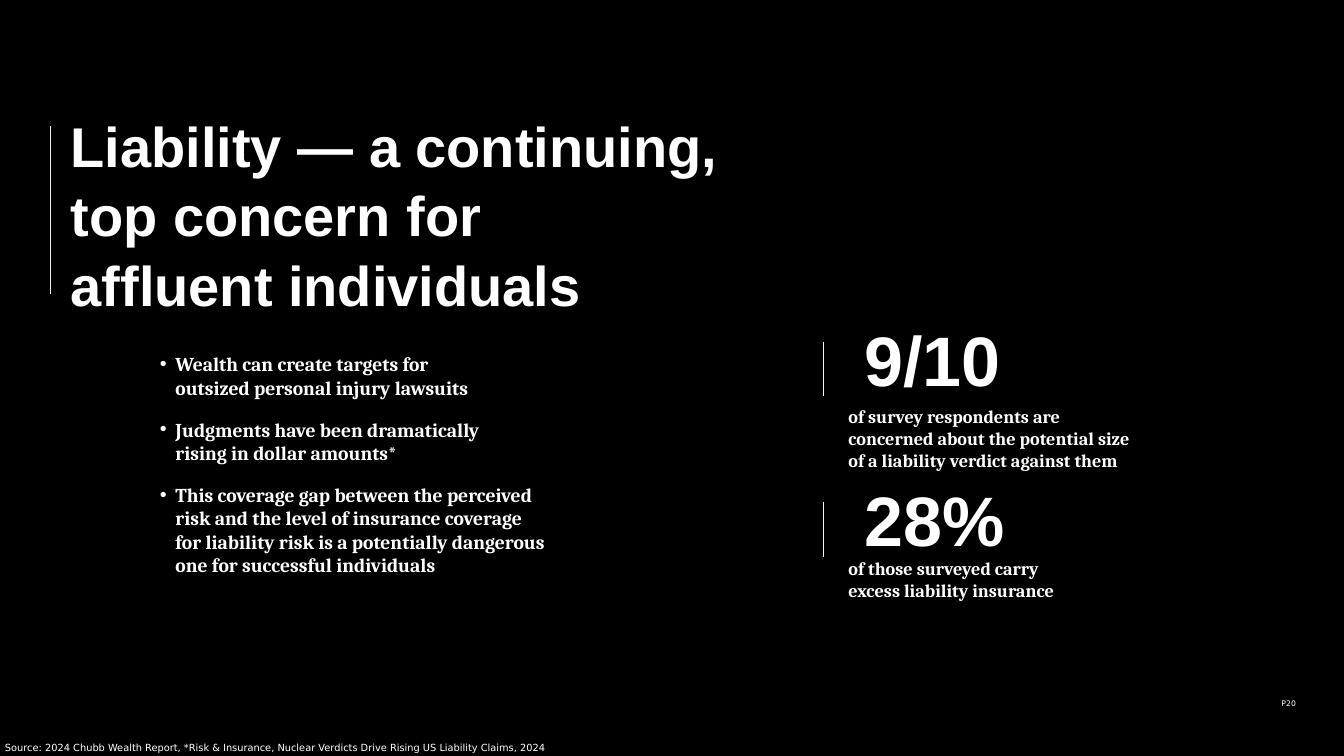
import pptx
import pptx.util
import pptx.dml.color
import pptx.enum.shapes
import pptx.enum.text
import pptx.oxml.ns
import lxml.etree
from pptx.util import Cm, Pt

WHITE = "FFFFFF"
RULE = "EEF6F7"


def color(value):
    return pptx.dml.color.RGBColor.from_string(value)


def place(shape, left, top, width, height):
    shape.left, shape.top = Cm(left), Cm(top)
    shape.width, shape.height = Cm(width), Cm(height)


def write(shape, paragraphs, size, font, bold=True, spacing=None, after=0, bullet=False, inset=0):
    frame = shape.text_frame
    frame.word_wrap = True
    frame.auto_size = pptx.enum.text.MSO_AUTO_SIZE.NONE
    frame.vertical_anchor = pptx.enum.text.MSO_ANCHOR.TOP
    frame.margin_left = frame.margin_right = Cm(inset)
    frame.margin_top = frame.margin_bottom = Cm(inset / 2)
    for index, text in enumerate(paragraphs):
        paragraph = frame.paragraphs[0] if index == 0 else frame.add_paragraph()
        paragraph.text = text
        paragraph.alignment = pptx.enum.text.PP_ALIGN.LEFT
        paragraph.space_before = Pt(0)
        paragraph.space_after = Pt(after)
        paragraph.line_spacing = spacing
        if bullet:
            properties = paragraph._p.get_or_add_pPr()
            properties.set("marL", str(Cm(0.79)))
            properties.set("indent", str(-Cm(0.79)))
            mark = lxml.etree.SubElement(properties, pptx.oxml.ns.qn("a:buChar"))
            mark.set("char", "•")
        paragraph.font.size = Pt(size)
        paragraph.font.name = font
        paragraph.font.bold = bold
        paragraph.font.color.rgb = color(WHITE)


def add_text(slide, left, top, width, height, text, size, font, **style):
    box = slide.shapes.add_textbox(Cm(left), Cm(top), Cm(width), Cm(height))
    write(box, [text], size, font, **style)


def add_rule(slide, left, top, height):
    rule = slide.shapes.add_connector(
        pptx.enum.shapes.MSO_CONNECTOR.STRAIGHT, Cm(left), Cm(top), Cm(left), Cm(top + height))
    rule.line.color.rgb = color(RULE)
    rule.line.width = Pt(0.5)
    lxml.etree.SubElement(rule._element.spPr, pptx.oxml.ns.qn("a:effectLst"))


def add_backdrop(slide, width, height):
    backdrop = slide.shapes.add_shape(
        pptx.enum.shapes.MSO_SHAPE.RECTANGLE, 0, 0, width, height)
    backdrop.shadow.inherit = False
    backdrop.fill.solid()
    backdrop.fill.fore_color.rgb = color("000000")
    backdrop.line.color.rgb = color("000000")
    backdrop.line.width = Pt(1)
    slide.shapes._spTree.insert(2, backdrop._element)


def add_heading(slide, left, top, width, height):
    add_rule(slide, left, top + 0.89, 8.46)
    title = slide.shapes.title
    place(title, left + 1.02, top, width - 1.02, height)
    write(title, ["Liability — a continuing,\vtop concern for\vaffluent individuals"],
          80, "Arial", spacing=1.04)


def add_concerns(slide, left, top, width, height):
    concerns = slide.placeholders[1]
    place(concerns, left, top, width, height)
    write(concerns, [
        "Wealth can create targets for\voutsized personal injury lawsuits",
        "Judgments have been dramatically\vrising in dollar amounts*",
        "This coverage gap between the perceived risk and the level of insurance coverage\v"
        "for liability risk is a potentially dangerous one for successful individuals",
    ], 28, "Cambria", after=26, bullet=True)


def add_statistic(slide, left, top, figure, caption, caption_offset, caption_height):
    add_rule(slide, left, top + 1.29, 2.74)
    add_text(slide, left + 2.08, top, 10.59, 4.34, figure, 100, "Arial")
    add_text(slide, left + 1.27, top + caption_offset, 14.35, caption_height,
             caption, 26, "Cambria")


def add_footer(slide, top):
    add_text(slide, 0, top, 29.87, 1.7,
             "Source: 2024 Chubb Wealth Report, *Risk & Insurance, "
             "Nuclear Verdicts Drive Rising US Liability Claims, 2024",
             14, "DejaVu Sans", bold=False, inset=0.25)
    add_text(slide, 64.57, top - 2.01, 1.2, 0.56, "P20", 11, "DejaVu Sans", bold=False)


def main():
    deck = pptx.Presentation()
    deck.slide_width, deck.slide_height = Cm(67.72), Cm(38.1)
    slide = deck.slides.add_slide(deck.slide_layouts[1])
    add_backdrop(slide, deck.slide_width, deck.slide_height)
    add_heading(slide, 2.54, 5.46, 37.27, 10.26)
    add_concerns(slide, 8.05, 17.75, 19.41, 11.43)
    add_statistic(slide, 41.48, 15.95, "9/10",
                  "of survey respondents are concerned about the potential size "
                  "of a liability verdict against them", 4.47, 3.33)
    add_statistic(slide, 41.48, 24.03, "28%",
                  "of those surveyed carry\vexcess liability insurance", 4.06, 2.24)
    add_footer(slide, 37.24)
    deck.save("out.pptx")


if __name__ == "__main__":
    main()
